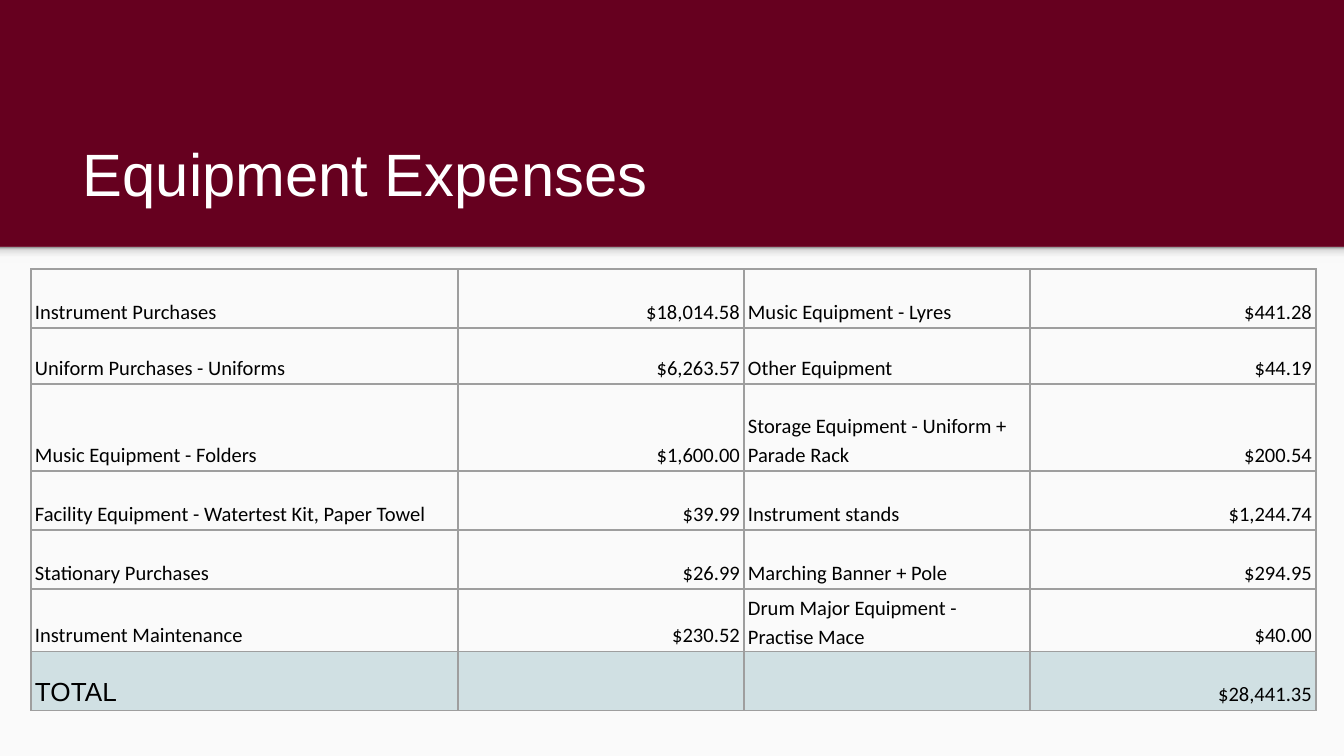
from lxml.etree import SubElement
from pptx import Presentation
from pptx.dml.color import RGBColor
from pptx.enum.shapes import MSO_SHAPE
from pptx.enum.text import MSO_ANCHOR, PP_ALIGN
from pptx.oxml.ns import qn
from pptx.util import Emu, Pt

EMU_PER_PX = 914400 / 134.4
SLIDE_WIDTH, SLIDE_HEIGHT = 1344, 756
BAND_BOTTOM = 247

COLORS = {
    "maroon": "66001F",
    "paper": "FAFAFA",
    "white": "FFFFFF",
    "black": "000000",
    "border": "9E9E9E",
    "total": "D0E0E3",
}
SHADOW_STOPS = [(0, "F9F9F9"), (36, "F9F9F9"), (80, "DEDEDE"), (100, "999999")]

TITLE_FORMAT = {"name": "Arial", "size": Pt(32), "color": "white"}
BODY_FORMAT = {"name": "Calibri", "size": Pt(11), "color": "black"}
TOTAL_FORMAT = {"name": "Arial", "size": Pt(14), "color": "black"}

COLUMN_WIDTHS = [427, 286, 286, 286]
ROW_HEIGHTS = [59, 56, 87, 59, 59, 59, 59]
EXPENSES = [
    ["Instrument Purchases", "$18,014.58", "Music Equipment - Lyres", "$441.28"],
    ["Uniform Purchases - Uniforms", "$6,263.57", "Other Equipment", "$44.19"],
    ["Music Equipment - Folders", "$1,600.00",
     "Storage Equipment - Uniform + Parade Rack", "$200.54"],
    ["Facility Equipment - Watertest Kit, Paper Towel", "$39.99",
     "Instrument stands", "$1,244.74"],
    ["Stationary Purchases", "$26.99", "Marching Banner + Pole", "$294.95"],
    ["Instrument Maintenance", "$230.52",
     "Drum Major Equipment - Practise Mace", "$40.00"],
    ["TOTAL", "", "", "$28,441.35"],
]


def px(length):
    return Emu(round(length * EMU_PER_PX))


def rgb(name):
    return RGBColor.from_string(COLORS[name])


def write_text(paragraph, text, text_format):
    run = paragraph.add_run()
    run.text = text
    for attribute, value in text_format.items():
        if attribute == "color":
            run.font.color.rgb = rgb(value)
        else:
            setattr(run.font, attribute, value)


def add_rectangle(slide, *box):
    shape = slide.shapes.add_shape(MSO_SHAPE.RECTANGLE, *map(px, box))
    shape.shadow.inherit = False
    shape.line.fill.background()
    return shape


def fill_gradient(shape, stops, angle):
    shape.fill.gradient()
    shape.fill.gradient_angle = angle
    stop_list = shape.element.spPr.find(qn("a:gradFill")).find(qn("a:gsLst"))
    for stop in list(stop_list):
        stop_list.remove(stop)
    for position, color in stops:
        stop = SubElement(stop_list, qn("a:gs"), pos=str(position * 1000))
        SubElement(stop, qn("a:srgbClr"), val=color)


def add_title(slide, text, *box):
    frame = slide.shapes.add_textbox(*map(px, box)).text_frame
    frame.word_wrap = True
    frame.vertical_anchor = MSO_ANCHOR.BOTTOM
    for side in ("left", "right", "top", "bottom"):
        setattr(frame, f"margin_{side}", px(13))
    write_text(frame.paragraphs[0], text, TITLE_FORMAT)


def add_borders(cell):
    properties = cell._tc.get_or_add_tcPr()
    for side in ("lnL", "lnR", "lnT", "lnB"):
        line = SubElement(properties, qn(f"a:{side}"), w=str(Pt(0.75)))
        fill = SubElement(line, qn("a:solidFill"))
        SubElement(fill, qn("a:srgbClr"), val=COLORS["border"])


def format_cell(cell, text, is_amount, is_total):
    cell_format = {
        "vertical_anchor": MSO_ANCHOR.BOTTOM,
        "margin_left": px(4), "margin_right": px(4),
        "margin_top": px(3), "margin_bottom": px(3),
    }
    for attribute, value in cell_format.items():
        setattr(cell, attribute, value)
    add_borders(cell)
    if is_total:
        cell.fill.solid()
        cell.fill.fore_color.rgb = rgb("total")
    else:
        cell.fill.background()
    if not text:
        return
    is_total_label = is_total and not is_amount
    paragraph = cell.text_frame.paragraphs[0]
    paragraph.alignment = PP_ALIGN.RIGHT if is_amount else PP_ALIGN.LEFT
    if not is_total_label:
        paragraph.line_spacing = 1.15
    write_text(paragraph, text, TOTAL_FORMAT if is_total_label else BODY_FORMAT)


def add_expense_table(slide, left, top):
    box = (left, top, sum(COLUMN_WIDTHS), sum(ROW_HEIGHTS))
    table = slide.shapes.add_table(
        len(ROW_HEIGHTS), len(COLUMN_WIDTHS), *map(px, box)).table
    table.first_row = table.horz_banding = False
    for column, width in zip(table.columns, COLUMN_WIDTHS):
        column.width = px(width)
    for row, height in zip(table.rows, ROW_HEIGHTS):
        row.height = px(height)
    for row_index, texts in enumerate(EXPENSES):
        is_total = row_index == len(EXPENSES) - 1
        for column_index, text in enumerate(texts):
            cell = table.cell(row_index, column_index)
            format_cell(cell, text, column_index % 2 == 1, is_total)


def main():
    presentation = Presentation()
    presentation.slide_width = px(SLIDE_WIDTH)
    presentation.slide_height = px(SLIDE_HEIGHT)
    slide = presentation.slides.add_slide(presentation.slide_layouts[6])

    # Maroon background with a light content area
    slide.background.fill.solid()
    slide.background.fill.fore_color.rgb = rgb("maroon")
    content_area = add_rectangle(
        slide, 0, BAND_BOTTOM, SLIDE_WIDTH, SLIDE_HEIGHT - BAND_BOTTOM)
    content_area.fill.solid()
    content_area.fill.fore_color.rgb = rgb("paper")

    # Soft shade under the title band
    shade = add_rectangle(slide, 0, BAND_BOTTOM, SLIDE_WIDTH, 16)
    fill_gradient(shade, SHADOW_STOPS, 90)

    # Title and expenses
    add_title(slide, "Equipment Expenses", 70, 109, 1208, 113)
    add_expense_table(slide, 31, 269)

    presentation.save("out.pptx")


if __name__ == "__main__":
    main()
